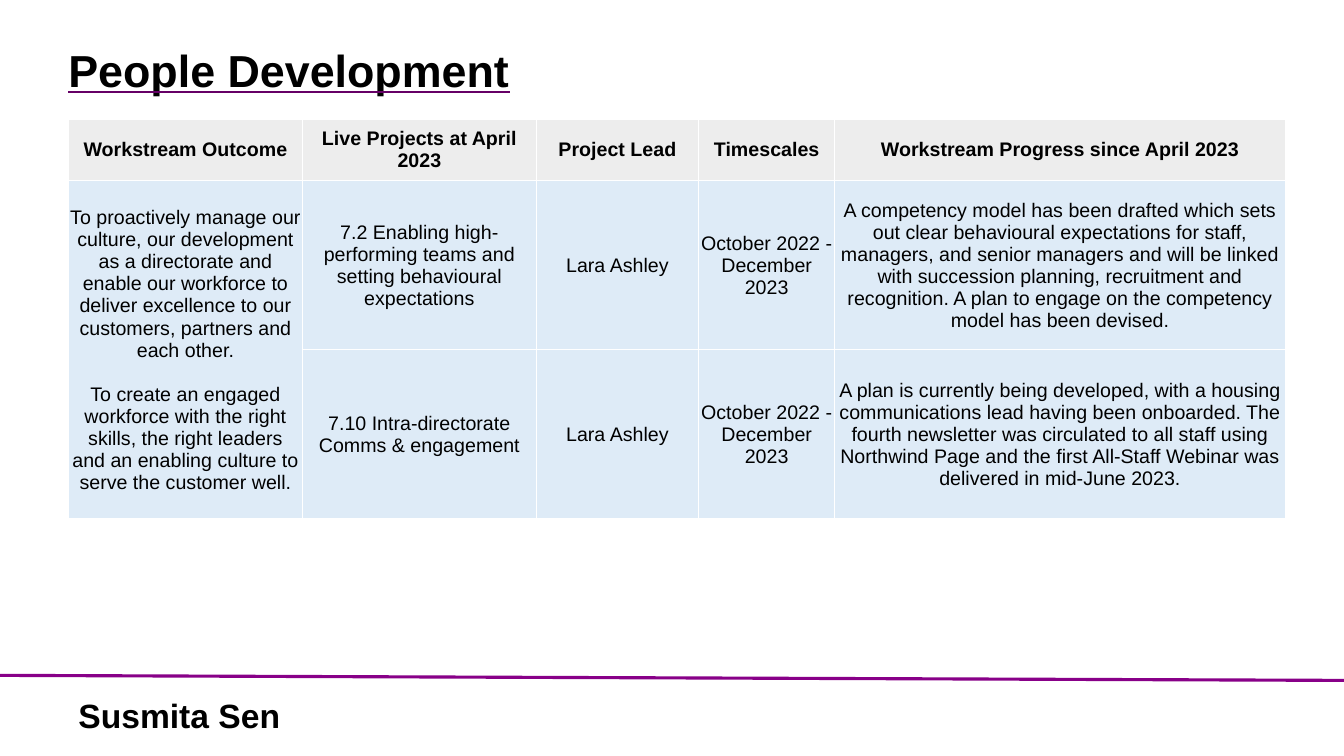
from dataclasses import dataclass

from lxml import etree
from pptx import Presentation
from pptx.dml.color import RGBColor
from pptx.enum.shapes import MSO_CONNECTOR
from pptx.enum.text import MSO_ANCHOR, PP_ALIGN
from pptx.oxml.ns import qn
from pptx.util import Inches, Pt

STRAIGHT = MSO_CONNECTOR.STRAIGHT
TOP, MIDDLE = MSO_ANCHOR.TOP, MSO_ANCHOR.MIDDLE
CENTER = PP_ALIGN.CENTER
COLORS = {
    "text": "000000",
    "rule": "880088",
    "underline": "660066",
    "border": "FFFFFF",
    "header": "EDEDED",
    "body": "DEEBF7",
}
COLS = [2.32, 2.32, 1.61, 1.35, 4.47]
ROWS = [0.61, 1.68, 1.68]
PERIOD = "October 2022 - December 2023"
OUTCOMES = [
    "To proactively manage our culture, our development as a directorate and enable our "
    "workforce to deliver excellence to our customers, partners and each other.",
    "To create an engaged workforce with the right skills, the right leaders and an "
    "enabling culture to serve the customer well.",
]
HEADINGS = [
    "Workstream Outcome",
    "Live Projects at April 2023",
    "Project Lead",
    "Timescales",
    "Workstream Progress since April 2023",
]


@dataclass
class Label:
    text: str
    left: float
    top: float
    width: float
    height: float
    size: int
    anchor: MSO_ANCHOR
    underline: bool = False


@dataclass
class Project:
    name: str
    lead: str
    timescale: str
    progress: str


LABELS = [
    Label("Susmita Sen", 0.68, 6.89, 3.87, 0.47, 24, TOP),
    Label("People Development", 0.58, 0.26, 12.76, 0.92, 32, MIDDLE, True),
]
PROJECTS = [
    Project(
        "7.2 Enabling high-performing teams and setting behavioural expectations",
        "Lara Ashley",
        PERIOD,
        "A competency model has been drafted which sets out clear behavioural expectations "
        "for staff, managers, and senior managers and will be linked with succession "
        "planning, recruitment and recognition. A plan to engage on the competency model "
        "has been devised.",
    ),
    Project(
        "7.10 Intra-directorate Comms & engagement",
        "Lara Ashley",
        PERIOD,
        "A plan is currently being developed, with a housing communications lead having "
        "been onboarded. The fourth newsletter was circulated to all staff using "
        "Northwind Page and the first All-Staff Webinar was delivered in mid-June 2023.",
    ),
]


def rgb(name: str) -> RGBColor:
    """Look up a named colour."""
    return RGBColor.from_string(COLORS[name])


def apply(target, values: dict) -> None:
    """Set each format value on the target."""
    for name, value in values.items():
        setattr(target, name, value)


def add_run(p, text: str, size: int, bold: bool, underline: bool = False):
    """Add a formatted run to a paragraph."""
    r = p.add_run()
    r.text = text
    apply(r.font, {"name": "Arial", "size": Pt(size), "bold": bold, "underline": underline})
    r.font.color.rgb = rgb("text")
    return r


def add_solid(parent, color: str) -> None:
    """Append a solid fill element."""
    fill = etree.SubElement(parent, qn("a:solidFill"))
    etree.SubElement(fill, qn("a:srgbClr")).set("val", COLORS[color])


def add_label(s, label: Label) -> None:
    """Draw a bold heading in a text box."""
    box = [Inches(v) for v in (label.left, label.top, label.width, label.height)]
    tf = s.shapes.add_textbox(*box).text_frame
    apply(tf, {"word_wrap": True, "vertical_anchor": label.anchor})
    p = tf.paragraphs[0]
    p.line_spacing = 0.9
    r = add_run(p, label.text, label.size, True, label.underline)
    if label.underline:
        line_fill = etree.Element(qn("a:uFill"))
        add_solid(line_fill, "underline")
        r.font._element.find(qn("a:latin")).addprevious(line_fill)


def add_rule(s) -> None:
    """Draw the slightly sloping footer line."""
    ends = [Inches(v) for v in (0, 6.7, 13.33, 6.75)]
    sp = s.shapes.add_connector(STRAIGHT, *ends)
    sp.line.color.rgb = rgb("rule")
    sp.line.width = Pt(2.25)
    etree.SubElement(sp._element.spPr, qn("a:effectLst"))


def fill_cell(cell, texts: list[str], header: bool) -> None:
    """Format a table cell and write its paragraphs."""
    inset = Inches(0 if header else 0.01)
    apply(cell, {
        "margin_left": inset,
        "margin_right": inset,
        "margin_top": inset,
        "margin_bottom": 0,
        "vertical_anchor": MIDDLE,
    })
    props = cell._tc.get_or_add_tcPr()
    for side in ("lnL", "lnR", "lnT", "lnB"):
        border = etree.SubElement(props, qn(f"a:{side}"), w=str(Pt(1)))
        add_solid(border, "border")
    cell.fill.solid()
    cell.fill.fore_color.rgb = rgb("header" if header else "body")
    for i, text in enumerate(texts):
        p = cell.text_frame.add_paragraph() if i else cell.text_frame.paragraphs[0]
        p.alignment = CENTER
        if i:
            p.space_before = Pt(15.75)
        add_run(p, text, 14, header)


def add_projects(s) -> None:
    """Build the workstream table."""
    box = [Inches(v) for v in (0.68, 1.18, sum(COLS), sum(ROWS))]
    table = s.shapes.add_table(len(ROWS), len(COLS), *box).table
    for column, width in zip(table.columns, COLS):
        column.width = Inches(width)
    for row, height in zip(table.rows, ROWS):
        row.height = Inches(height)
    table.cell(1, 0).merge(table.cell(2, 0))
    rows = [[[text] for text in HEADINGS]]
    for i, project in enumerate(PROJECTS):
        details = (project.name, project.lead, project.timescale, project.progress)
        rows.append([[] if i else OUTCOMES, *([text] for text in details)])
    for i, row in enumerate(rows):
        for j, texts in enumerate(row):
            fill_cell(table.cell(i, j), texts, i == 0)


def main() -> None:
    """Build and save the slide."""
    prs = Presentation()
    apply(prs, {"slide_width": Inches(13.33), "slide_height": Inches(7.5)})
    s = prs.slides.add_slide(prs.slide_layouts[6])
    add_rule(s)
    for label in LABELS:
        add_label(s, label)
    add_projects(s)
    prs.save("out.pptx")


if __name__ == "__main__":
    main()
